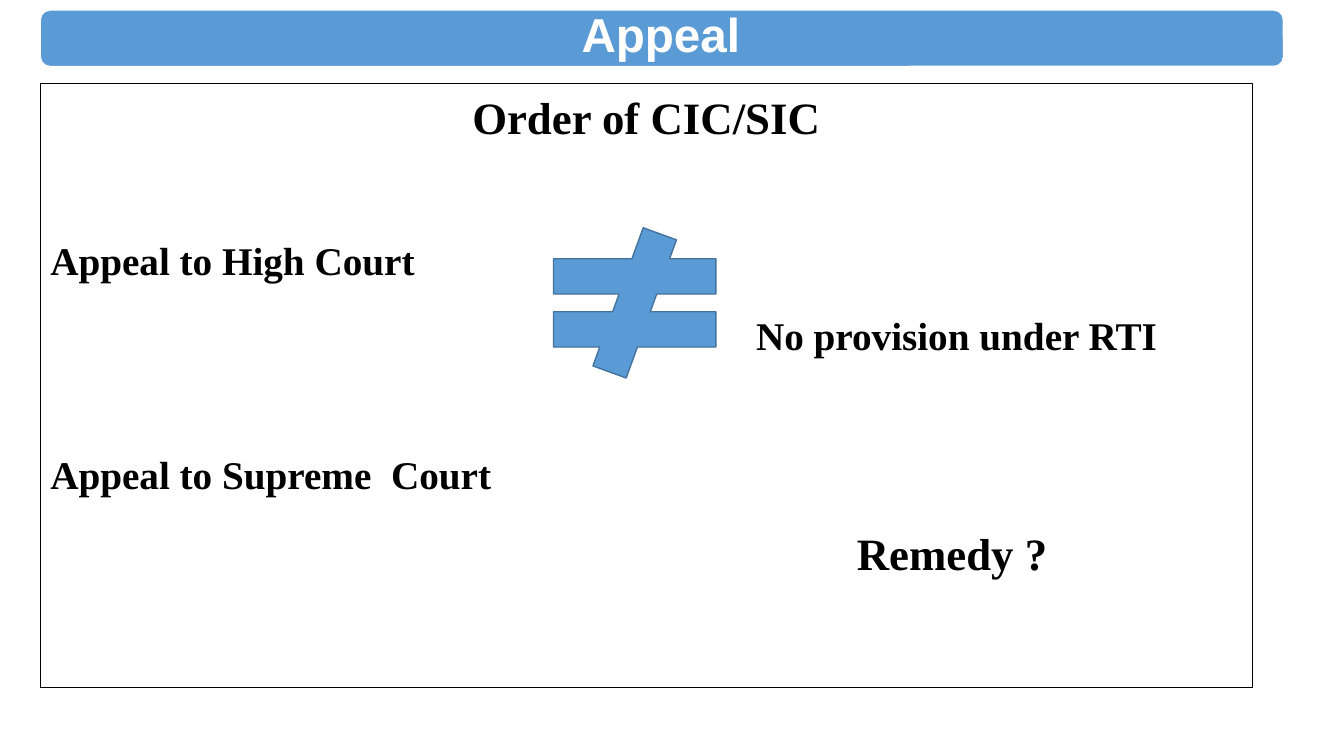
from dataclasses import dataclass

from pptx import Presentation
from pptx.dml.color import RGBColor
from pptx.enum.shapes import MSO_SHAPE as Preset
from pptx.enum.text import MSO_ANCHOR as Anchor, PP_ALIGN as Align
from pptx.util import Inches, Pt

COLORS = {
    "blue": "5B9BD5",
    "blue_edge": "43739E",
    "white": "FFFFFF",
    "black": "000000",
}


@dataclass(frozen=True)
class Panel:
    preset: Preset
    box: tuple[float, float, float, float]
    fill: str | None
    line: str
    line_width: float


@dataclass(frozen=True)
class Entry:
    text: str
    size: int
    gap: int = 0
    indent: float = 0
    align: Align = Align.LEFT


BANNER = Panel(Preset.ROUNDED_RECTANGLE, (0.4, 0.1, 12.33, 0.56), "blue", "white", 1)
FRAME = Panel(Preset.RECTANGLE, (0.4, 0.83, 12.02, 5.99), None, "black", 0.25)
NOT_EQUAL = Panel(Preset.MATH_NOT_EQUAL, (5.2, 2.26, 2.19, 1.49), "blue", "blue_edge", 1)

TITLE_BOX = (0.42, 0.12, 12.27, 0.5)
STEP_GAP, ANSWER_GAP = 66, 20
ENTRIES = [
    Entry("Order of CIC/SIC", 32, align=Align.CENTER),
    Entry("Appeal to High Court", 28, STEP_GAP),
    Entry("No provision under RTI", 28, ANSWER_GAP, indent=7),
    Entry("Appeal to Supreme  Court", 28, STEP_GAP),
    Entry("Remedy ?", 32, ANSWER_GAP, indent=8),
]


def color(name: str) -> RGBColor:
    return RGBColor.from_string(COLORS[name])


def set_all(target, values: dict) -> None:
    for name, value in values.items():
        setattr(target, name, value)


def place(shape, box: tuple[float, float, float, float]) -> None:
    sides = ("left", "top", "width", "height")
    set_all(shape, dict(zip(sides, map(Inches, box))))


def add_panel(page, panel: Panel):
    shape = page.shapes.add_shape(panel.preset, *map(Inches, panel.box))
    shape.shadow.inherit = False
    if panel.fill:
        shape.fill.solid()
        shape.fill.fore_color.rgb = color(panel.fill)
    else:
        shape.fill.background()
    shape.line.color.rgb = color(panel.line)
    shape.line.width = Pt(panel.line_width)
    return shape


def write(para, text: str, font: str, size: int, color_name: str) -> None:
    span = para.add_run()
    span.text = text
    set_all(span.font, {"name": font, "size": Pt(size), "bold": True})
    span.font.color.rgb = color(color_name)


def add_title(page, text: str) -> None:
    title = page.shapes.title
    place(title, TITLE_BOX)
    page.shapes._spTree.append(title._element)  # bring in front of the banner
    frame = title.text_frame
    set_all(frame, {"vertical_anchor": Anchor.MIDDLE, "word_wrap": True,
                    "margin_top": 0, "margin_bottom": 0})
    para = frame.paragraphs[0]
    set_all(para, {"alignment": Align.CENTER, "line_spacing": 0.9})
    write(para, text, "Arial", 34, "white")


def add_entries(shape, entries: list[Entry]) -> None:
    frame = shape.text_frame
    set_all(frame, {"vertical_anchor": Anchor.TOP, "word_wrap": True,
                    "margin_top": Inches(0.06)})
    for index, entry in enumerate(entries):
        para = frame.add_paragraph() if index else frame.paragraphs[0]
        set_all(para, {"alignment": entry.align, "space_before": Pt(entry.gap)})
        para._p.get_or_add_pPr().set("marL", str(Inches(entry.indent)))
        write(para, entry.text, "Times New Roman", entry.size, "black")


def main() -> None:
    deck = Presentation()
    set_all(deck, {"slide_width": Inches(13.33), "slide_height": Inches(7.5)})
    page = deck.slides.add_slide(deck.slide_layouts.get_by_name("Title Only"))
    add_panel(page, BANNER)
    add_title(page, "Appeal")
    add_entries(add_panel(page, FRAME), ENTRIES)
    add_panel(page, NOT_EQUAL)
    deck.save("out.pptx")


if __name__ == "__main__":
    main()
